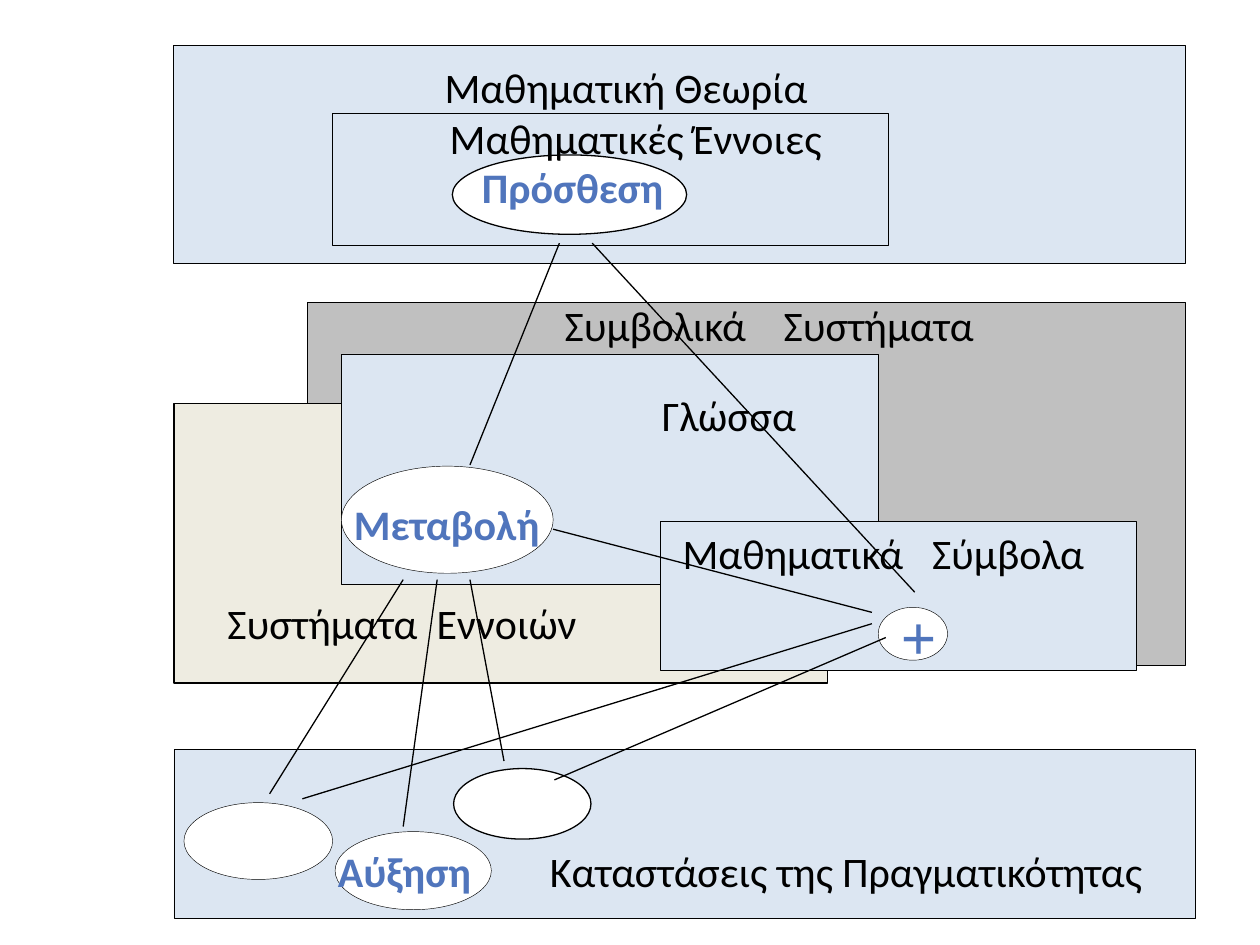
from dataclasses import dataclass
from typing import NamedTuple

from lxml.etree import SubElement
from pptx import Presentation
from pptx.dml.color import RGBColor as Rgb
from pptx.enum.shapes import MSO_CONNECTOR as Conn, MSO_SHAPE as Form
from pptx.enum.text import MSO_ANCHOR as Anchor, PP_ALIGN as Align
from pptx.oxml.ns import qn
from pptx.util import Inches, Pt


@dataclass(frozen=True)
class Theme:
    ink: str = "000000"
    blue: str = "5075BC"
    pale: str = "DCE6F2"
    grey: str = "C0C0C0"
    sand: str = "EEECE1"
    white: str = "FFFFFF"
    font: str = "Calibri"
    math: str = "Times New Roman"
    size: float = 24
    large: float = 36
    thin: float = 0.25
    thick: float = 0.75


THEME = Theme()


class Box(NamedTuple):
    left: float
    top: float
    width: float
    height: float
    fill: str = THEME.pale
    line: float = THEME.thin
    form: Form = Form.RECTANGLE


class Link(NamedTuple):
    x1: float
    y1: float
    x2: float
    y2: float


class Label(NamedTuple):
    text: str
    left: float
    top: float
    width: float
    color: str = THEME.ink
    bold: bool = False
    gap: float = 0  # points added to the space between two words
    font: str = THEME.font
    size: float = THEME.size
    align: Align = Align.CENTER


def oval(left: float, top: float, width: float, height: float,
         line: float = THEME.thin) -> Box:
    return Box(left, top, width, height, THEME.white, line, Form.OVAL)


def term(text: str, left: float, top: float, width: float) -> Label:
    return Label(text, left, top, width, THEME.blue, True)


# Frames and ovals, from back to front
BOXES = [
    # Mathematical theory
    Box(1.38, 0.36, 8.03, 1.73, line=THEME.thick),
    Box(2.64, 0.9, 4.41, 1.05, line=THEME.thick),
    oval(3.59, 1.23, 1.86, 0.63, THEME.thick),
    # Symbols and concepts
    Box(2.44, 2.4, 6.97, 2.88, THEME.grey, THEME.thick),
    Box(1.38, 3.2, 5.19, 2.22, THEME.sand, THEME.thick),
    Box(2.71, 2.81, 4.26, 1.83),
    Box(5.24, 4.14, 3.78, 1.18),
    oval(6.97, 4.82, 0.55, 0.42),
    oval(2.71, 3.7, 1.68, 0.85),
    # Reality
    Box(1.38, 5.95, 8.11, 1.34),
    oval(1.46, 6.37, 1.18, 0.61),
    oval(2.66, 6.6, 1.24, 0.62),
    oval(3.6, 6.1, 1.09, 0.56, THEME.thick),
]

LINKS = [
    # From addition down to change and plus
    Link(4.44, 1.93, 3.73, 3.69),
    Link(4.7, 1.93, 7.26, 4.7),
    # From change to plus and to the three states
    Link(4.39, 4.2, 6.92, 4.86),
    Link(3.2, 4.6, 2.14, 6.3),
    Link(3.47, 4.6, 3.2, 6.56),
    Link(3.73, 4.6, 4, 6.04),
    # From plus to two states
    Link(7.03, 5.06, 4.4, 6.19),
    Link(6.92, 4.95, 2.4, 6.34),
]

LABELS = [
    Label("Μαθηματική Θεωρία", 3.43, 0.44, 3.27, align=Align.LEFT),
    Label("Μαθηματικές Έννοιες", 2.8, 0.84, 4.49),
    term("Πρόσθεση", 3.54, 1.23, 2.01),
    Label("Συμβολικά Συστήματα", 3.19, 2.33, 5.83, gap=16),
    Label("Συστήματα Εννοιών", 1.18, 4.69, 4.02, gap=5.5),
    Label("Μαθηματικά Σύμβολα", 5.04, 4.14, 3.94, gap=11),
    Label("Γλώσσα", 4.8, 3.04, 1.97),
    Label("+", 7.05, 4.69, 0.39, THEME.blue, True,
          font=THEME.math, size=THEME.large),
    term("Μεταβολή", 2.52, 3.91, 2.05),
    term("Αύξηση", 2.52, 6.66, 1.38),
    Label("Καταστάσεις της Πραγματικότητας", 3.9, 6.66, 5.63),
]


def draw_box(shapes, box: Box) -> None:
    shape = shapes.add_shape(box.form, *map(Inches, box[:4]))
    shape.shadow.inherit = False
    shape.fill.solid()
    shape.fill.fore_color.rgb = Rgb.from_string(box.fill)
    shape.line.color.rgb = Rgb.from_string(THEME.ink)
    shape.line.width = Pt(box.line)


def draw_link(shapes, link: Link) -> None:
    line = shapes.add_connector(Conn.STRAIGHT, *map(Inches, link))
    line.line.color.rgb = Rgb.from_string(THEME.ink)
    line.line.width = Pt(THEME.thick)
    SubElement(line._element.spPr, qn("a:effectLst"))


def draw_label(shapes, label: Label) -> None:
    high = label.size / 48  # one line with its insets
    area = (label.left, label.top, label.width, high)
    frame = shapes.add_textbox(*map(Inches, area)).text_frame
    frame.word_wrap = True
    frame.vertical_anchor = Anchor.TOP
    para = frame.paragraphs[0]
    para.alignment = label.align
    if label.gap:
        first, space, last = label.text.partition(" ")
        for part in (first, space, last):
            para.add_run().text = part
        para.runs[1].font._element.set("spc", str(int(label.gap * 100)))
    else:
        para.text = label.text
    for run in para.runs:
        run.font.name = label.font
        run.font.size = Pt(label.size)
        run.font.bold = label.bold
        run.font.color.rgb = Rgb.from_string(label.color)


def main() -> None:
    deck = Presentation()
    deck.slide_width, deck.slide_height = Inches(10), Inches(7.5)
    shapes = deck.slides.add_slide(deck.slide_layouts[6]).shapes
    for box in BOXES:
        draw_box(shapes, box)
    for link in LINKS:
        draw_link(shapes, link)
    for label in LABELS:
        draw_label(shapes, label)
    deck.save("out.pptx")


if __name__ == "__main__":
    main()
